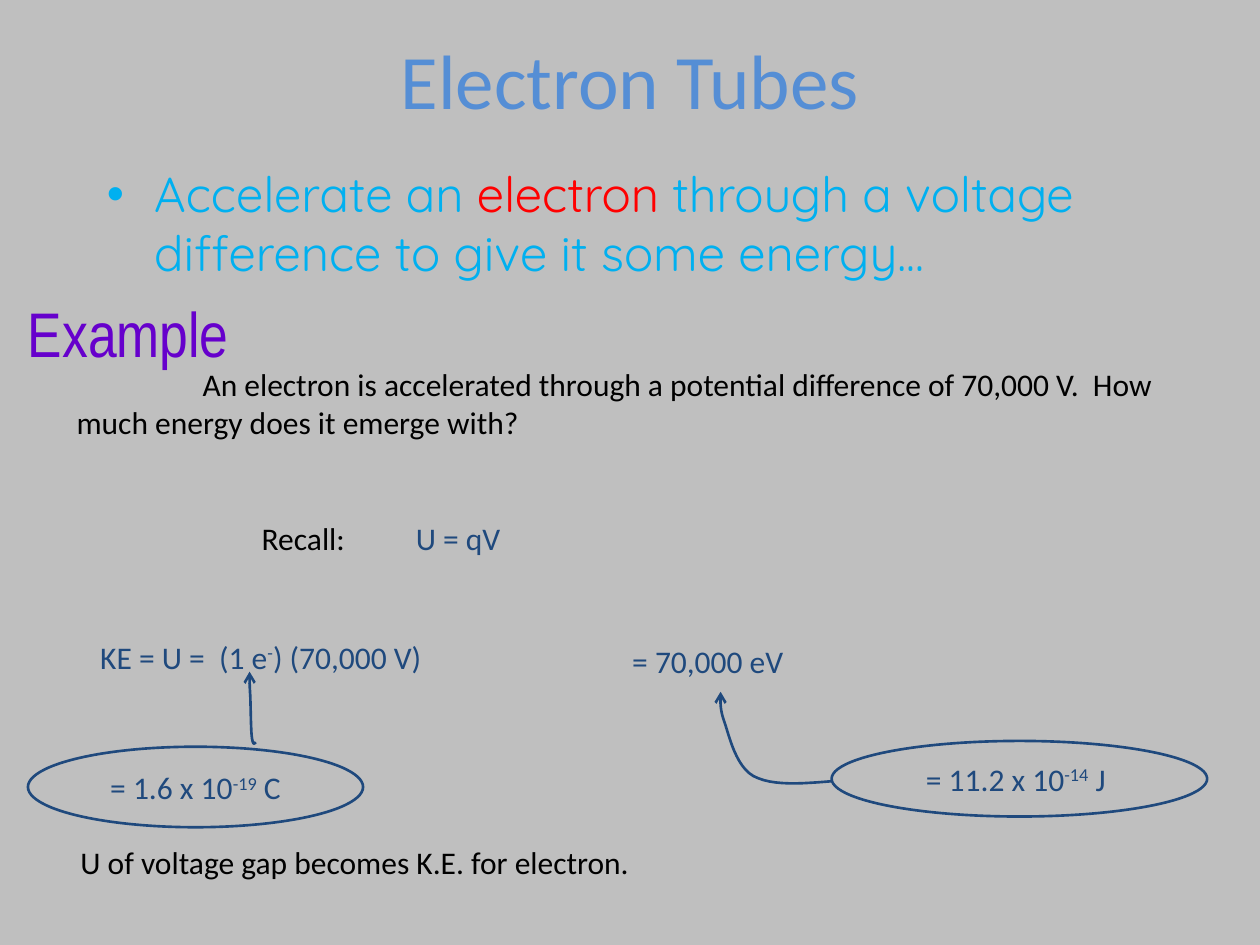
import pptx
import pptx.util
import pptx.dml.color
import pptx.enum.shapes
import pptx.enum.text
import pptx.oxml.ns
import lxml.etree

Pt = pptx.util.Pt
ALIGN = pptx.enum.text.PP_ALIGN
ANCHOR = pptx.enum.text.MSO_ANCHOR
COLORS = {
    "back": "BFBFBF",
    "title": "558ED5",
    "sky": "00B0F0",
    "red": "FF0000",
    "black": "000000",
    "purple": "6600CC",
    "navy": "1F497D",
}


def color(name):
    return pptx.dml.color.RGBColor.from_string(COLORS[name])


def add_tag(parent, tag, **attrs):
    return lxml.etree.SubElement(parent, pptx.oxml.ns.qn(tag), attrs)


def place(shape, box):
    shape.left, shape.top, shape.width, shape.height = map(Pt, box)


def write(shape, parts, size=18, face="Calibri", align=ALIGN.LEFT,
          anchor=ANCHOR.TOP, first=0, left=0, bullet=None):
    frame = shape.text_frame
    frame.word_wrap = True
    frame.vertical_anchor = anchor
    para = frame.paragraphs[0]
    para.alignment = align
    props = para._p.get_or_add_pPr()
    props.set("marL", str(Pt(left)))
    props.set("indent", str(Pt(first)))
    if bullet:
        add_tag(props, "a:buFont", typeface="Arial")
        add_tag(props, "a:buChar", char=bullet)
    para.font.size = Pt(size)
    para.font.name = face
    for text, hue, *raised in parts:
        run = para.add_run()
        run.text = text
        run.font.color.rgb = color(hue)
        if raised:
            run._r.get_or_add_rPr().set("baseline", "30000")


def add_text(slide, box, parts, **style):
    shape = slide.shapes.add_textbox(*map(Pt, box))
    write(shape, parts, **style)


def outline(shape):
    shape.shadow.inherit = False
    shape.fill.background()
    shape.line.color.rgb = color("navy")
    shape.line.width = Pt(1.5)


def add_oval(slide, box, parts):
    kind = pptx.enum.shapes.MSO_SHAPE.OVAL
    shape = slide.shapes.add_shape(kind, *map(Pt, box))
    outline(shape)
    write(shape, parts, align=ALIGN.CENTER, anchor=ANCHOR.MIDDLE)


def bend(a, b, c, d, steps=12):
    for n in range(1, steps + 1):
        t = n / steps
        u = 1 - t
        yield tuple(
            Pt(u**3 * p + 3 * u * u * t * q + 3 * u * t * t * r + t**3 * s)
            for p, q, r, s in zip(a, b, c, d)
        )


def add_curve(slide, knots):
    start = knots[0]
    path = slide.shapes.build_freeform(Pt(start[0]), Pt(start[1]))
    for n in range(0, len(knots) - 1, 3):
        path.add_line_segments(list(bend(*knots[n:n + 4])), close=False)
    shape = path.convert_to_shape()
    outline(shape)
    add_tag(shape.line._get_or_add_ln(), "a:tailEnd", type="arrow")


def main():
    deck = pptx.Presentation()
    deck.slide_width, deck.slide_height = Pt(720), Pt(540)
    slide = deck.slides.add_slide(deck.slide_layouts[5])
    slide.background.fill.solid()
    slide.background.fill.fore_color.rgb = color("back")

    title = slide.shapes.title
    place(title, (54, 0, 612, 90))
    write(title, [("Electron Tubes", "title")], size=44,
          align=ALIGN.CENTER, anchor=ANCHOR.MIDDLE)

    add_text(slide, (54, 90, 612, 115), [
        ("Accelerate an ", "sky"),
        ("electron", "red"),
        (" through a voltage difference to give it some energy...", "sky"),
    ], size=28, face="Quicksand", left=27, first=-27, bullet="•")
    add_text(slide, (36.7, 205.2, 659, 94), [
        ("An electron is accelerated through a potential difference of "
         "70,000 V.  How much energy does it emerge with?", "black"),
    ], first=72)
    add_text(slide, (3.3, 165, 140, 72), [("Example", "purple")],
             size=36, face="Arial Narrow", align=ALIGN.CENTER)
    add_text(slide, (142.5, 293, 80, 41), [("Recall:", "black")])
    add_text(slide, (230.5, 293, 322, 41), [("U = qV", "navy")])

    add_text(slide, (50.2, 361, 379, 36), [
        ("KE = U =  (1 e", "navy"),
        ("-", "navy", True),
        (") (70,000 V)", "navy"),
    ])
    add_oval(slide, (16, 426.7, 191.5, 46), [
        ("= 1.6 x 10", "navy"), ("-19", "navy", True), (" C", "navy"),
    ])
    add_curve(slide, [
        (146.2, 424.1), (145.4, 424.8), (144.7, 426.2), (144, 421.9),
        (143.3, 416.9), (143.3, 403.9), (143, 397.4),
        (142.6, 391.7), (142.6, 387.4), (142.6, 383.8),
    ])

    add_text(slide, (354.2, 363.6, 245.5, 36), [("= 70,000 eV", "navy")])
    add_oval(slide, (475.2, 423.4, 214.6, 43.2), [
        ("= 11.2 x 10", "navy"), ("-14", "navy", True), (" J ", "navy"),
    ])
    add_curve(slide, [
        (475.9, 446.4), (458.6, 447.8), (441.4, 449.3), (430.6, 443.5),
        (420.5, 437.8), (416.9, 421.2), (414, 412.6),
        (411.1, 404.6), (411.8, 400.3), (411.8, 395.3),
    ])

    add_text(slide, (38.9, 478.1, 630.7, 36),
             [("U of voltage gap becomes K.E. for electron.", "black")])
    deck.save("out.pptx")


if __name__ == "__main__":
    main()
